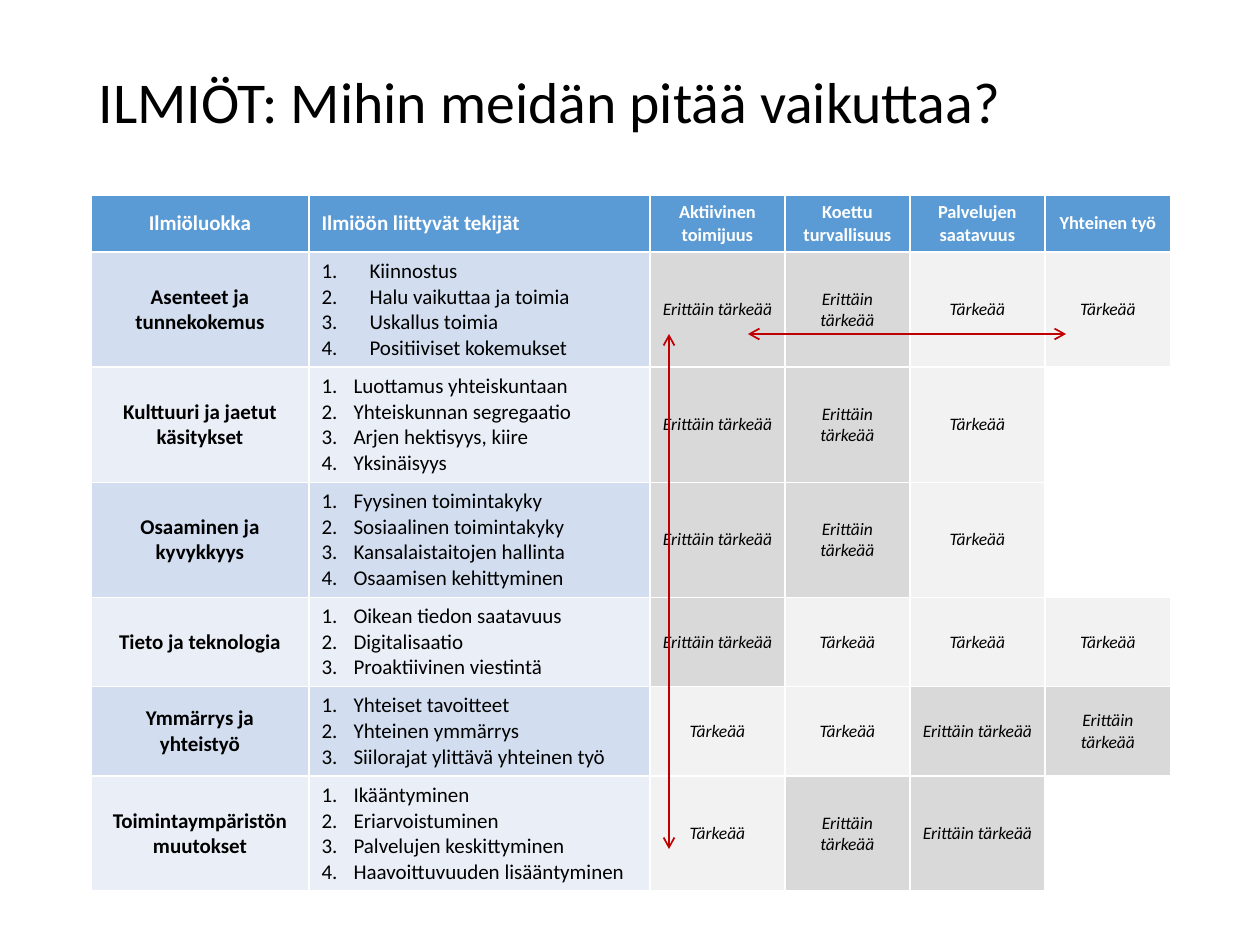
from lxml.etree import SubElement
from pptx import Presentation
from pptx.dml.color import RGBColor
from pptx.enum.shapes import MSO_CONNECTOR
from pptx.enum.text import MSO_ANCHOR, PP_ALIGN
from pptx.oxml.ns import qn
from pptx.util import Pt

EMU_PER_PX = 914400 / 126
FONT = "Calibri"
BLACK, WHITE, RED = "000000", "FFFFFF", "C00000"
HEADER_BLUE, BANDS = "5B9BD5", ("D2DEEF", "EAEFF7")

# Importance ratings: code -> wording and cell colour
RATINGS = {
    "E": ("Erittäin tärkeää", "D9D9D9"),
    "T": ("Tärkeää", "F2F2F2"),
    "-": ("", WHITE),
}
COLUMN_WIDTHS = (218, 341, 135, 125, 135, 126)
ROW_HEIGHT = 52  # minimum; rows grow with their lists
HEADINGS = ("Ilmiöluokka", "Ilmiöön liittyvät tekijät", "Aktiivinen toimijuus",
            "Koettu turvallisuus", "Palvelujen saatavuus", "Yhteinen työ")

# Category, its factors, one rating code per remaining column
PHENOMENA = (
    ("Asenteet ja tunnekokemus",
     ("Kiinnostus", "Halu vaikuttaa ja toimia", "Uskallus toimia",
      "Positiiviset kokemukset"), "EETT"),
    ("Kulttuuri ja jaetut käsitykset",
     ("Luottamus yhteiskuntaan", "Yhteiskunnan segregaatio",
      "Arjen hektisyys, kiire", "Yksinäisyys"), "EET-"),
    ("Osaaminen ja kyvykkyys",
     ("Fyysinen toimintakyky", "Sosiaalinen toimintakyky",
      "Kansalaistaitojen hallinta", "Osaamisen kehittyminen"), "EET-"),
    ("Tieto ja teknologia",
     ("Oikean tiedon saatavuus", "Digitalisaatio", "Proaktiivinen viestintä"), "ETTT"),
    ("Ymmärrys ja yhteistyö",
     ("Yhteiset tavoitteet", "Yhteinen ymmärrys",
      "Siilorajat ylittävä yhteinen työ"), "TTEE"),
    ("Toimintaympäristön muutokset",
     ("Ikääntyminen", "Eriarvoistuminen", "Palvelujen keskittyminen",
      "Haavoittuvuuden lisääntyminen"), "TEE-"),
)


def px(length):
    return round(length * EMU_PER_PX)


def color(hex_code):
    return RGBColor.from_string(hex_code)


def write(frame, *lines, size, ink=BLACK, bold=False, italic=False,
          align=PP_ALIGN.LEFT, spacing=None, number_indent=None):
    for index, line in enumerate(lines):
        paragraph = frame.add_paragraph() if index else frame.paragraphs[0]
        paragraph.alignment = align
        paragraph.line_spacing = spacing
        run = paragraph.add_run()
        run.text = line
        font = run.font
        font.name, font.size = FONT, Pt(size)
        font.bold, font.italic = bold, italic
        font.color.rgb = color(ink)
        if number_indent:
            properties = paragraph._p.get_or_add_pPr()
            properties.set("marL", str(px(number_indent)))
            properties.set("indent", str(-px(number_indent)))
            SubElement(properties, qn("a:buFont"), typeface="+mj-lt")
            SubElement(properties, qn("a:buAutoNum"), type="arabicPeriod")


def fill_cell(cell, fill, *lines, anchor=MSO_ANCHOR.MIDDLE, **text_format):
    cell.fill.solid()
    cell.fill.fore_color.rgb = color(fill)
    cell.vertical_anchor = anchor
    write(cell.text_frame, *lines, **text_format)


def add_title(slide, text):
    title = slide.shapes.title
    title.left, title.top, title.width, title.height = map(px, (86, 13, 1086, 183))
    title.text_frame.vertical_anchor = MSO_ANCHOR.MIDDLE
    write(title.text_frame, text, size=33, spacing=0.9)


def add_phenomena_table(slide):
    frame = slide.shapes.add_table(len(PHENOMENA) + 1, len(HEADINGS), px(91), px(195),
                                   px(sum(COLUMN_WIDTHS)), px(687))
    table = frame.table
    for column, width in zip(table.columns, COLUMN_WIDTHS):
        column.width = px(width)
    for row in table.rows:
        row.height = px(ROW_HEIGHT)

    # Header row
    for index, heading in enumerate(HEADINGS):
        fill_cell(table.cell(0, index), HEADER_BLUE, heading, ink=WHITE, bold=True,
                  size=12 if index < 2 else 10.5,
                  align=PP_ALIGN.LEFT if index == 1 else PP_ALIGN.CENTER)

    # Category, numbered factors and ratings
    for index, (category, factors, codes) in enumerate(PHENOMENA):
        band = BANDS[index % 2]
        category_cell, factors_cell, *rating_cells = table.rows[index + 1].cells
        fill_cell(category_cell, band, category, size=12, bold=True,
                  align=PP_ALIGN.CENTER)
        fill_cell(factors_cell, band, *factors, size=12, anchor=MSO_ANCHOR.TOP,
                  number_indent=32 if index else 48)
        for cell, code in zip(rating_cells, codes):
            wording, shade = RATINGS[code]
            fill_cell(cell, shade, *filter(None, [wording]), size=10, italic=True,
                      align=PP_ALIGN.CENTER)


def add_double_arrow(slide, *ends):
    arrow = slide.shapes.add_connector(MSO_CONNECTOR.STRAIGHT, *map(px, ends))
    arrow.line.color.rgb = color(RED)
    arrow.line.width = Pt(1)
    outline = arrow.line._get_or_add_ln()
    for end in ("a:headEnd", "a:tailEnd"):
        SubElement(outline, qn(end), type="arrow")
    SubElement(arrow._element.spPr, qn("a:effectLst"))


def main():
    deck = Presentation()
    deck.slide_width, deck.slide_height = px(1260), px(945)
    slide = deck.slides.add_slide(deck.slide_layouts[5])  # title only
    add_title(slide, "ILMIÖT: Mihin meidän pitää vaikuttaa?")
    add_phenomena_table(slide)
    add_double_arrow(slide, 748, 334, 1066, 334)
    add_double_arrow(slide, 669, 849, 669, 334)
    deck.save("out.pptx")


if __name__ == "__main__":
    main()
